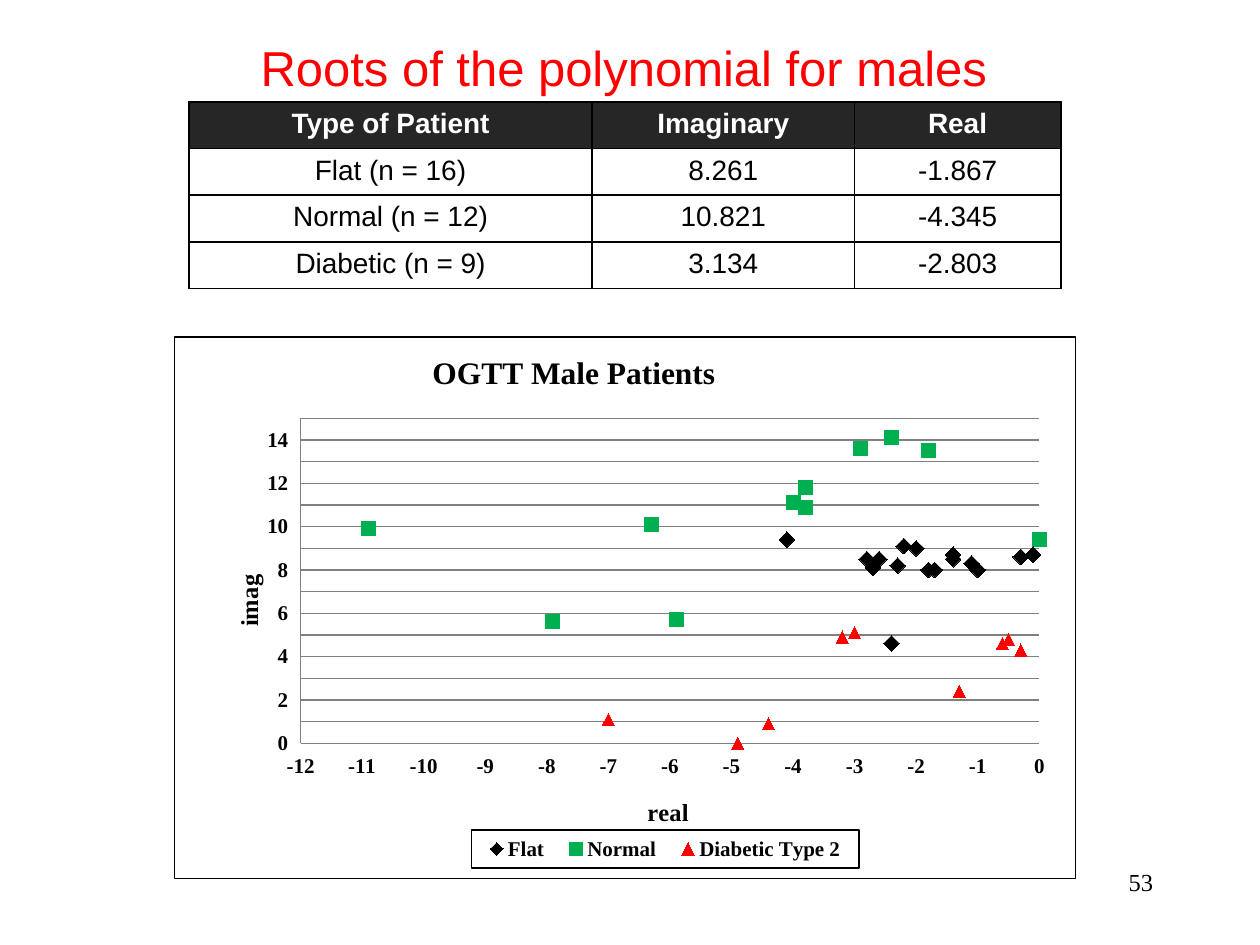
from lxml.etree import SubElement, fromstring
from pptx import Presentation
from pptx.chart.data import XyChartData
from pptx.dml.color import RGBColor
from pptx.enum.chart import (XL_AXIS_CROSSES, XL_CHART_TYPE, XL_LEGEND_POSITION,
                             XL_MARKER_STYLE, XL_TICK_LABEL_POSITION, XL_TICK_MARK)
from pptx.enum.text import MSO_ANCHOR, PP_ALIGN
from pptx.oxml import parse_xml
from pptx.oxml.ns import nsdecls, qn
from pptx.util import Inches, Pt

COLORS = {"text": "000000", "title": "FF0000", "head": "262626", "white": "FFFFFF",
          "grid": "808080", "flat": "000000", "normal": "00B050", "diabetic": "FF0000"}
SANS, SERIF = "Arial", "Times New Roman"

ROWS = [("Type of Patient", "Imaginary", "Real"),
        ("Flat (n = 16)", "8.261", "-1.867"),
        ("Normal (n = 12)", "10.821", "-4.345"),
        ("Diabetic (n = 9)", "3.134", "-2.803")]

SERIES = [
    ("Flat", "flat", XL_MARKER_STYLE.DIAMOND, 9,
     [(-1, 8), (-0.3, 8.6), (-2, 9), (-1.7, 8), (-1.4, 8.7), (-2.2, 9.1),
      (-1.8, 8), (-1.1, 8.3), (-1.4, 8.5), (-2.8, 8.5), (-4.1, 9.4), (-2.6, 8.5),
      (-2.7, 8.1), (-2.4, 4.6), (-2.3, 8.2), (-0.1, 8.7)]),
    ("Normal", "normal", XL_MARKER_STYLE.SQUARE, 8,
     [(-2.4, 14.1), (-2.9, 13.6), (-2.4, 14.1), (0, 9.4), (-4, 11.1), (-10.9, 9.9),
      (-6.3, 10.1), (-3.8, 10.9), (-7.9, 5.6), (-1.8, 13.5), (-5.9, 5.7), (-3.8, 11.8)]),
    ("Diabetic Type 2", "diabetic", XL_MARKER_STYLE.TRIANGLE, 7,
     [(-4.9, 0), (-0.3, 4.3), (-3, 5.1), (-3.2, 4.9), (-4.4, 0.9), (-0.5, 4.8),
      (-0.6, 4.6), (-7, 1.1), (-1.3, 2.4)]),
]


def rgb(name):
    return RGBColor.from_string(COLORS[name])


def set_attrs(obj, values):
    for name, value in values.items():
        setattr(obj, name, value)


def outline_xml(tag):
    return parse_xml(
        f'<{tag} {nsdecls("c", "a")}><a:solidFill><a:srgbClr val="{COLORS["white"]}"/></a:solidFill>'
        f'<a:ln w="9525"><a:solidFill><a:srgbClr val="{COLORS["text"]}"/></a:solidFill></a:ln></{tag}>')


def place(parent, index, x, y, w=None, h=None, inner=False):
    for old in parent.findall(qn("c:layout")):
        parent.remove(old)
    layout = parse_xml(f'<c:layout {nsdecls("c")}><c:manualLayout/></c:layout>')
    values = {"layoutTarget": "inner" if inner else None, "xMode": "edge", "yMode": "edge",
              "x": x, "y": y, "w": w, "h": h}
    for tag, value in values.items():
        if value is not None:
            SubElement(layout[0], qn(f"c:{tag}")).set("val", str(value))
    parent.insert(index, layout)


class Deck:
    def __init__(self):
        self.prs = Presentation()
        set_attrs(self.prs, {"slide_width": Inches(10), "slide_height": Inches(7.5)})
        self.s = self.prs.slides.add_slide(self.prs.slide_layouts[5])

    def style(self, font, size, color="text", name=SERIF, bold=False):
        set_attrs(font, {"size": Pt(size), "name": name, "bold": bold})
        font.color.rgb = rgb(color)

    def fill_text(self, tf, text, align=PP_ALIGN.CENTER, **fmt):
        p = tf.paragraphs[0]
        p.alignment = align
        r = p.add_run()
        r.text = text
        self.style(r.font, **fmt)

    def title(self, text, x, y, w, h):
        sp = self.s.shapes.title
        set_attrs(sp, {"left": Inches(x), "top": Inches(y),
                       "width": Inches(w), "height": Inches(h)})
        set_attrs(sp.text_frame, {"vertical_anchor": MSO_ANCHOR.TOP, "word_wrap": True,
                                  "margin_top": Inches(0.07)})
        self.fill_text(sp.text_frame, text, size=28, color="title", name=SANS)

    def text(self, text, x, y, w, h, **fmt):
        sp = self.s.shapes.add_textbox(Inches(x), Inches(y), Inches(w), Inches(h))
        sp.text_frame.word_wrap = True
        self.fill_text(sp.text_frame, text, **fmt)

    def cell_borders(self, cell):
        tcPr = cell._tc.get_or_add_tcPr()
        for i, side in enumerate(("lnL", "lnR", "lnT", "lnB")):
            tcPr.insert(i, fromstring(
                f'<a:{side} {nsdecls("a")} w="12700"><a:solidFill>'
                f'<a:srgbClr val="{COLORS["text"]}"/></a:solidFill></a:{side}>'))

    def table(self, rows, x, y, widths, row_h):
        frame = self.s.shapes.add_table(len(rows), len(widths), Inches(x), Inches(y),
                                        Inches(sum(widths)), Inches(row_h * len(rows)))
        table = frame.table
        for col, width in zip(table.columns, widths):
            col.width = Inches(width)
        for i, row in enumerate(rows):
            head = i == 0
            for j, text in enumerate(row):
                cell = table.cell(i, j)
                cell.fill.solid()
                cell.fill.fore_color.rgb = rgb("head" if head else "white")
                self.fill_text(cell.text_frame, text, size=16, name=SANS, bold=head,
                               color="white" if head else "text")
                self.cell_borders(cell)

    def axis(self, axis, title, low, high, grid, x, y):
        set_attrs(axis, {"minimum_scale": low, "maximum_scale": high, "major_unit": 1,
                         "has_major_gridlines": grid, "has_minor_gridlines": False,
                         "major_tick_mark": XL_TICK_MARK.NONE,
                         "minor_tick_mark": XL_TICK_MARK.NONE,
                         "tick_label_position": XL_TICK_LABEL_POSITION.LOW,
                         "crosses": XL_AXIS_CROSSES.MINIMUM, "has_title": True})
        set_attrs(axis.tick_labels, {"number_format": "0", "number_format_is_linked": False})
        self.style(axis.tick_labels.font, 12, bold=True)
        lines = [axis.format.line] + ([axis.major_gridlines.format.line] if grid else [])
        for line in lines:
            line.color.rgb = rgb("grid")
            line.width = Pt(0.75)
        self.fill_text(axis.axis_title.text_frame, title, size=14, bold=True)
        place(axis.axis_title._element, 1, x, y)

    def chart(self, title, series, x, y, w, h):
        data = XyChartData()
        for name, _, _, _, points in series:
            ser = data.add_series(name)
            for point in points:
                ser.add_data_point(*point)
        chart = self.s.shapes.add_chart(XL_CHART_TYPE.XY_SCATTER, Inches(x), Inches(y),
                                        Inches(w), Inches(h), data).chart
        self.style(chart.font, 10)
        root = chart._chartSpace
        root.find(qn("c:chart")).addnext(outline_xml("c:spPr"))
        place(root.find(qn("c:chart")).find(qn("c:plotArea")), 0,
              0.14, 0.15, 0.82, 0.6, inner=True)

        set_attrs(chart, {"has_title": True, "has_legend": True})
        self.fill_text(chart.chart_title.text_frame, title, size=18, bold=True)
        place(chart.chart_title._element, 1, 0.28, 0.02)

        legend = chart.legend
        set_attrs(legend, {"position": XL_LEGEND_POSITION.BOTTOM, "include_in_layout": False})
        self.style(legend.font, 12, bold=True)
        place(legend._element, 1, 0.33, 0.91, 0.43, 0.07)
        legend._element.find(qn("c:txPr")).addprevious(outline_xml("c:spPr"))

        self.axis(chart.category_axis, "real", -12, 0, False, 0.52, 0.84)
        self.axis(chart.value_axis, "imag", 0, 15, True, 0.06, 0.43)

        chart.plots[0].vary_by_categories = False
        for ser, (_, color, marker, size, _) in zip(chart.plots[0].series, series):
            ser.smooth = False
            ser.format.line.fill.background()
            set_attrs(ser.marker, {"style": marker, "size": size})
            fmt = ser.marker.format
            fmt.fill.solid()
            fmt.fill.fore_color.rgb = rgb(color)
            fmt.line.color.rgb = rgb(color)


def main():
    deck = Deck()
    deck.title("Roots of the polynomial for males", 0.73, 0.23, 8.44, 0.88)
    deck.table(ROWS, 1.5, 0.81, (3.2, 2.08, 1.64), 0.37)
    deck.chart("OGTT Male Patients", SERIES, 1.38, 2.67, 7.16, 4.31)
    deck.text("53", 7.17, 6.83, 2.08, 0.5, align=PP_ALIGN.RIGHT, size=14)
    deck.prs.save("out.pptx")


if __name__ == "__main__":
    main()
